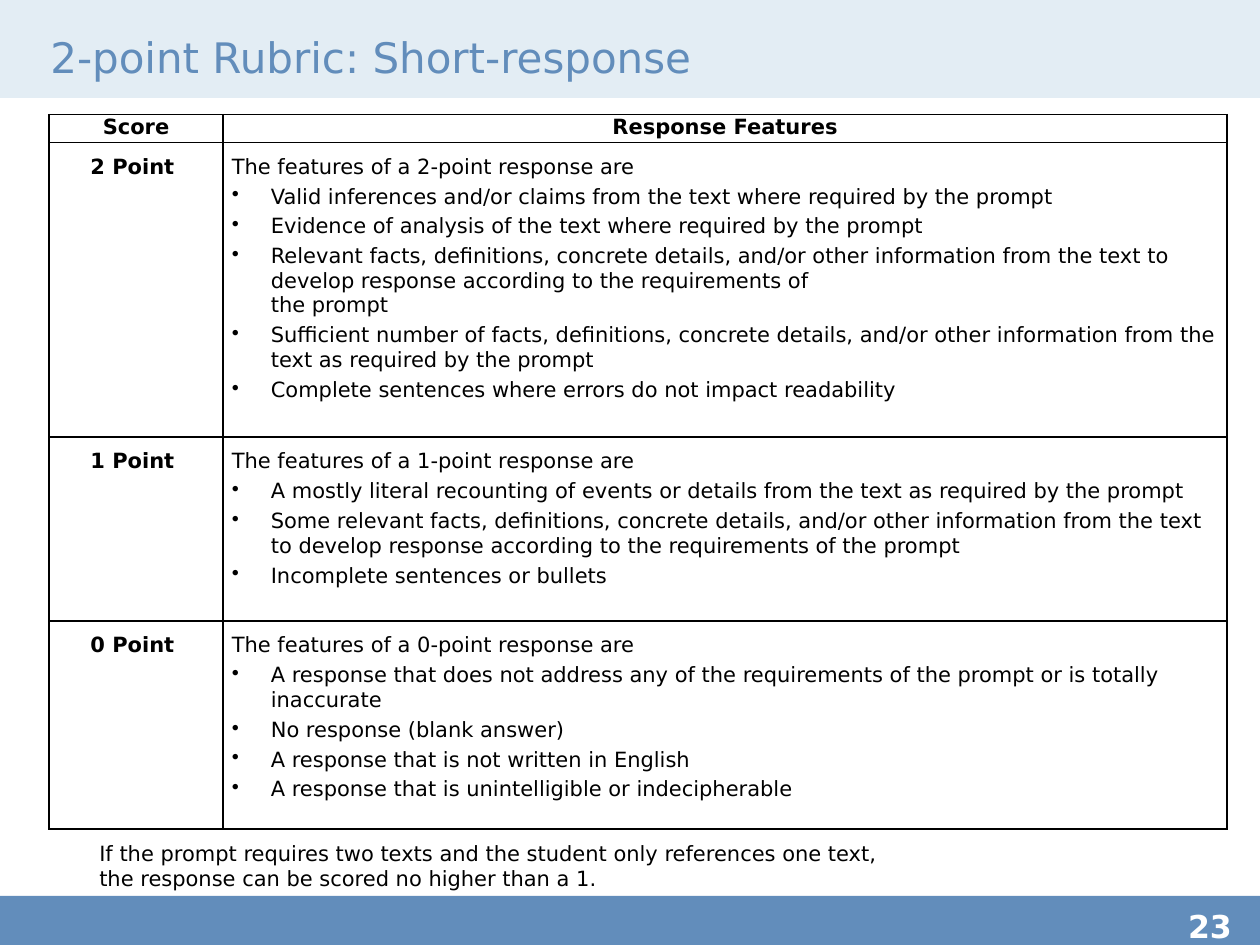
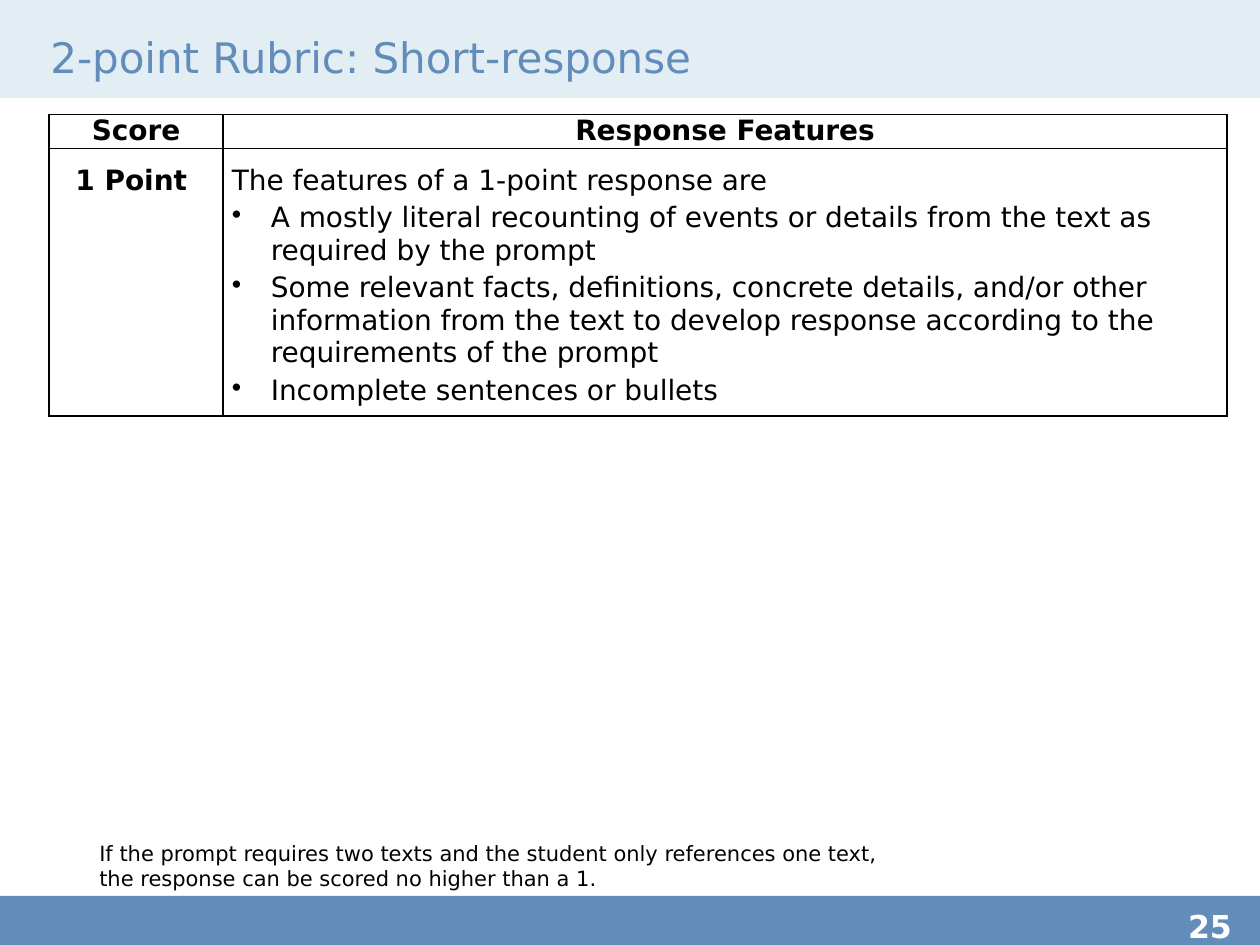
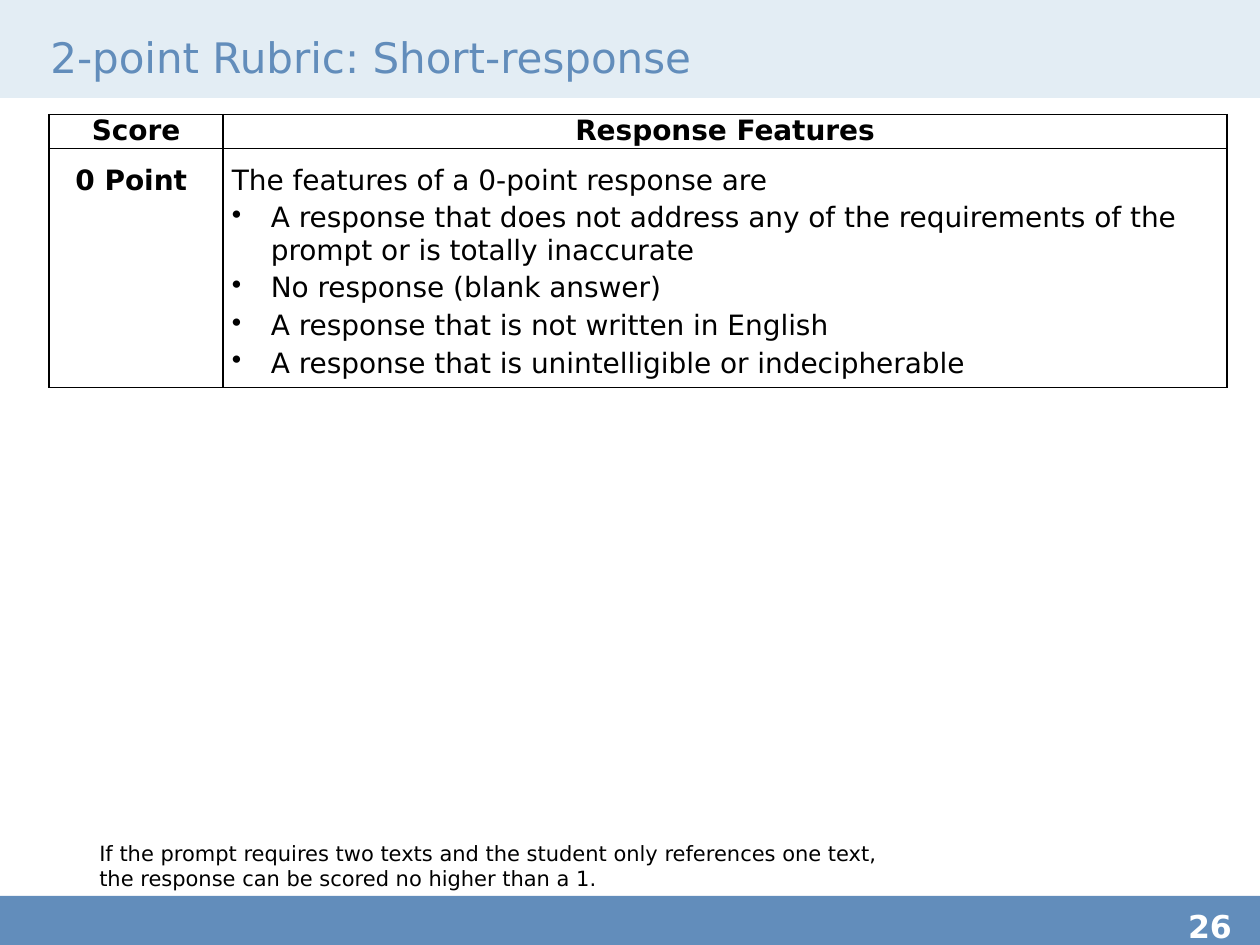
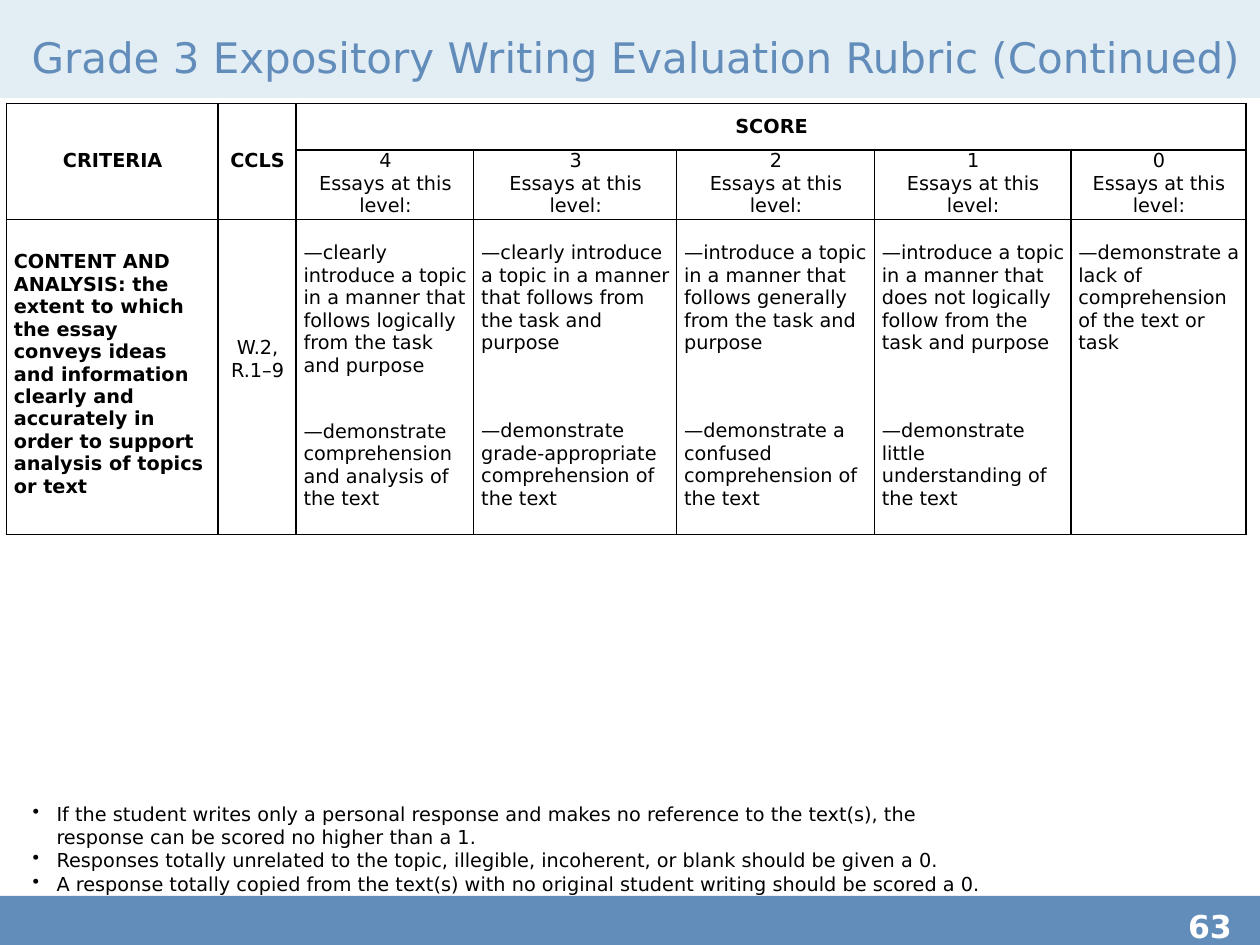
import pptx
import pptx.dml.color
import pptx.enum.shapes
import pptx.enum.text
import pptx.oxml
import pptx.oxml.ns
import pptx.util

Inches = pptx.util.Inches
Pt = pptx.util.Pt
CENTER = pptx.enum.text.PP_ALIGN.CENTER
MIDDLE = pptx.enum.text.MSO_ANCHOR.MIDDLE

FONT = "DejaVu Sans"
BLUE, PALE, WHITE, BLACK = "628DBB", "E3EDF4", "FFFFFF", "000000"

RUBRIC_TITLE = "2-point Rubric: Short-response"
RUBRIC_NOTE = ("If the prompt requires two texts and the student only references "
               "one text, the response can be scored no higher than a 1.")
FEATURES = {
    2: ["Valid inferences and/or claims from the text where required by the prompt",
        "Evidence of analysis of the text where required by the prompt",
        "Relevant facts, definitions, concrete details, and/or other information from the "
        "text to develop response according to the requirements of\vthe prompt",
        "Sufficient number of facts, definitions, concrete details, and/or other "
        "information from the text as required by the prompt",
        "Complete sentences where errors do not impact readability"],
    1: ["A mostly literal recounting of events or details from the text as required "
        "by the prompt",
        "Some relevant facts, definitions, concrete details, and/or other information from "
        "the text to develop response according to the requirements of the prompt",
        "Incomplete sentences or bullets"],
    0: ["A response that does not address any of the requirements of the prompt or is "
        "totally inaccurate",
        "No response (blank answer)",
        "A response that is not written in English",
        "A response that is unintelligible or indecipherable"],
}

ESSAY_TITLE = "Grade 3 Expository Writing Evaluation Rubric (Continued)"
CRITERION = ("CONTENT AND ANALYSIS: the extent to which the essay conveys ideas and "
             "information clearly and accurately in order to support analysis of topics or text")
# Each level: score, points (in points) between the two descriptions, descriptions
ESSAY_LEVELS = [
    (4, 25, ["—clearly introduce a topic in a manner that follows logically from the task "
             "and purpose",
             "—demonstrate comprehension and analysis of the text"]),
    (3, 37.5, ["—clearly introduce a topic in a manner that follows from the task and purpose",
               "—demonstrate grade-appropriate comprehension of the text"]),
    (2, 37.5, ["—introduce a topic in a manner that follows generally from the task and purpose",
               "—demonstrate a confused comprehension of the text"]),
    (1, 37.5, ["—introduce a topic in a manner that does not logically follow from the task "
               "and purpose",
               "—demonstrate little understanding of the text"]),
    (0, 0, ["—demonstrate a lack of comprehension of the text or task"]),
]
ESSAY_NOTES = [
    "If the student writes only a personal response and makes no reference to the text(s), "
    "the response can be scored no higher than a 1.",
    "Responses totally unrelated to the topic, illegible, incoherent, or blank should be "
    "given a 0.",
    "A response totally copied from the text(s) with no original student writing should be "
    "scored a 0.",
]


def rgb(value):
    return pptx.dml.color.RGBColor.from_string(value)


def write(frame, lines, size, color=BLACK, bold=False, align=None, gap=0):
    """Fill a frame with one paragraph per line, gap points apart."""
    frame.text = "\n".join(lines)
    for number, paragraph in enumerate(frame.paragraphs):
        paragraph.alignment = align
        if number and gap:
            paragraph.space_before = Pt(gap)
        for run in paragraph.runs:
            run.font.name = FONT
            run.font.size = Pt(size)
            run.font.bold = bold
            run.font.color.rgb = rgb(color)


def add_bullets(paragraphs, indent):
    for paragraph in paragraphs:
        properties = paragraph._p.get_or_add_pPr()
        properties.set("marL", str(Inches(indent)))
        properties.set("indent", str(-Inches(indent)))
        properties.append(pptx.oxml.parse_xml(
            f'<a:buChar {pptx.oxml.ns.nsdecls("a")} char="•"/>'))


def add_text(slide, box, lines, size, insets=(0.1, 0.05, 0.1, 0.05), **style):
    frame = slide.shapes.add_textbox(*map(Inches, box)).text_frame
    frame.word_wrap = True
    (frame.margin_left, frame.margin_top,
     frame.margin_right, frame.margin_bottom) = map(Inches, insets)
    write(frame, lines, size, **style)
    return frame


def add_band(slide, box, color):
    band = slide.shapes.add_shape(
        pptx.enum.shapes.MSO_SHAPE.RECTANGLE, *map(Inches, box))
    band.shadow.inherit = False
    band.fill.solid()
    band.fill.fore_color.rgb = rgb(color)
    band.line.fill.background()


def add_page(deck, title, title_box, number):
    """Add a slide with the shared bands, title and page number."""
    slide = deck.slides.add_slide(deck.slide_layouts[6])
    add_band(slide, (0, 7.11, 10, 0.39), BLUE)
    add_band(slide, (0, 0, 10, 1.31), PALE)
    add_band(slide, (0, 0.78, 10, 0.86), WHITE)
    heading = add_text(slide, title_box, [title], 24, (0, 0, 0.1, 0.05), color=BLUE)
    heading.vertical_anchor = MIDDLE
    add_text(slide, (9.43, 7.2, 0.57, 0.3), [str(number)], 18, (0, 0, 0, 0),
             color=WHITE, bold=True)
    return slide


def outline_cell(cell):
    cell.fill.background()
    properties = cell._tc.get_or_add_tcPr()
    for position, side in enumerate("LRTB"):
        properties.insert(position, pptx.oxml.parse_xml(
            f'<a:ln{side} {pptx.oxml.ns.nsdecls("a")} w="{Pt(1)}"><a:solidFill>'
            f'<a:srgbClr val="{BLACK}"/></a:solidFill></a:ln{side}>'))


def add_grid(slide, left, top, widths, heights, insets):
    """Add an empty outlined table with the given left and right cell insets."""
    table = slide.shapes.add_table(
        len(heights), len(widths), Inches(left), Inches(top),
        Inches(sum(widths)), Inches(sum(heights))).table
    table.first_row = table.horz_banding = False
    for column, width in zip(table.columns, widths):
        column.width = Inches(width)
    for row, height in zip(table.rows, heights):
        row.height = Inches(height)
    for cell in table.iter_cells():
        cell.margin_left, cell.margin_right = map(Inches, insets)
        cell.margin_top = cell.margin_bottom = 0
        outline_cell(cell)
    return table


def add_score_row(table, row, score, size):
    label = table.cell(row, 0).text_frame
    write(label, [f"{score} Point "], size, bold=True, align=CENTER)
    features = table.cell(row, 1).text_frame
    lead = f"The features of a {score}-point response are"
    write(features, [lead] + FEATURES[score], size, gap=3)
    add_bullets(features.paragraphs[1:], 0.31)
    for frame in (label, features):
        frame.paragraphs[0].line_spacing = 1.5


def add_rubric_slide(deck, number, scores, size, heights):
    slide = add_page(deck, RUBRIC_TITLE, (0.4, 0.23, 9, 0.49), number)
    table = add_grid(slide, 0.39, 0.91, (1.38, 7.97), heights, (0.07, 0.07))
    for column, name in enumerate(("Score", "Response Features")):
        write(table.cell(0, column).text_frame, [name], size, bold=True, align=CENTER)
    for row, score in enumerate(scores, 1):
        add_score_row(table, row, score, size)
    add_text(slide, (0.69, 6.62, 6.53, 0.51), [RUBRIC_NOTE], 12)


def add_essay_header(table):
    spans = (("CRITERIA", (0, 0), (1, 0)), ("CCLS", (0, 1), (1, 1)),
             ("SCORE", (0, 2), (0, 6)))
    for name, first, last in spans:
        cell = table.cell(*first)
        cell.merge(table.cell(*last))
        cell.vertical_anchor = MIDDLE
        write(cell.text_frame, [name], 11, bold=True, align=CENTER)


def add_essay_slide(deck, number):
    slide = add_page(deck, ESSAY_TITLE, (0.25, 0.23, 9.75, 0.49), number)
    table = add_grid(slide, 0.05, 0.82, (1.68, 0.62, 1.41, 1.61, 1.57, 1.56, 1.39),
                     (0.37, 0.55, 2.5), (0.06, 0.05))
    add_essay_header(table)

    criterion = table.cell(2, 0)
    criterion.margin_top = Inches(0.25)
    write(criterion.text_frame, [CRITERION], 11, bold=True)
    standards = table.cell(2, 1)
    standards.vertical_anchor = MIDDLE
    standards.margin_bottom = Inches(0.28)
    write(standards.text_frame, ["W.2, R.1–9"], 11, align=CENTER)

    for column, (score, gap, descriptions) in enumerate(ESSAY_LEVELS, 2):
        write(table.cell(1, column).text_frame, [str(score), "Essays at this level:"],
              11, align=CENTER)
        level = table.cell(2, column)
        level.margin_top = Inches(0.18)
        write(level.text_frame, descriptions, 11, gap=gap)

    notes = add_text(slide, (0.16, 6.32, 7.85, 0.84), ESSAY_NOTES, 11)
    add_bullets(notes.paragraphs, 0.19)


def main():
    deck = pptx.Presentation()
    deck.slide_width, deck.slide_height = Inches(10), Inches(7.5)
    add_rubric_slide(deck, 23, (2, 1, 0), 12, (0.22, 2.34, 1.46, 1.65))
    add_rubric_slide(deck, 25, (1,), 16, (0.26, 2.05))
    add_rubric_slide(deck, 26, (0,), 16, (0.26, 1.83))
    add_essay_slide(deck, 63)
    deck.save("out.pptx")


if __name__ == "__main__":
    main()
